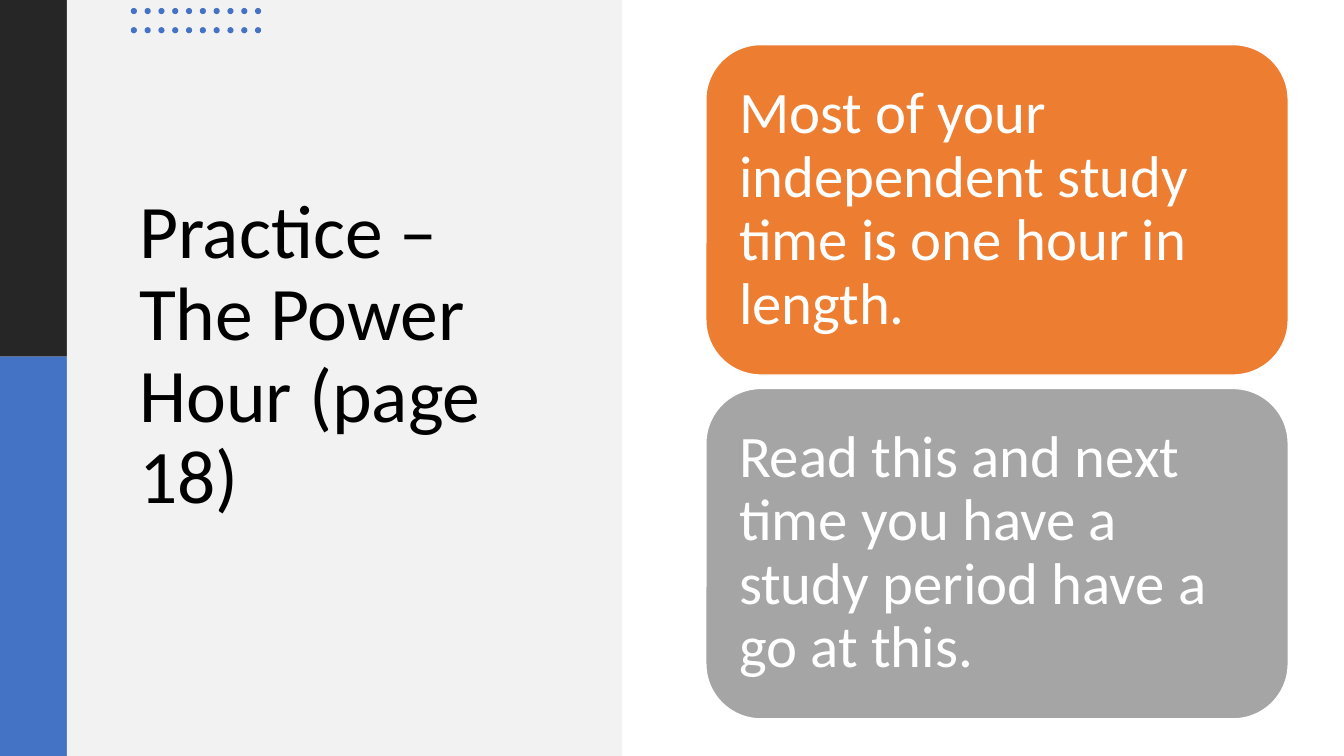
from dataclasses import dataclass

from pptx import Presentation
from pptx.dml.color import RGBColor
from pptx.enum.shapes import MSO_SHAPE
from pptx.enum.text import MSO_ANCHOR, MSO_AUTO_SIZE, PP_ALIGN
from pptx.shapes.autoshape import Shape
from pptx.util import Pt


@dataclass(frozen=True)
class Theme:
    font: str = "Calibri"
    title_size: float = 54
    card_size: float = 42
    line_spacing: float = 0.9
    black: str = "000000"
    white: str = "FFFFFF"
    dark: str = "262626"
    blue: str = "4472C4"
    panel: str = "F2F2F2"
    orange: str = "ED7D31"
    gray: str = "A5A5A5"


@dataclass(frozen=True)
class Box:
    left: float
    top: float
    width: float
    height: float

    def lengths(self) -> tuple[Pt, Pt, Pt, Pt]:
        return Pt(self.left), Pt(self.top), Pt(self.width), Pt(self.height)


@dataclass(frozen=True)
class Card:
    text: str
    color: str


THEME = Theme()
SLIDE_WIDTH, SLIDE_HEIGHT = 960, 540
BAR_WIDTH, BAR_SPLIT = 47.8, 254.8

BANDS = [
    (Box(0, 0, BAR_WIDTH, BAR_SPLIT), THEME.dark),
    (Box(0, BAR_SPLIT, BAR_WIDTH, SLIDE_HEIGHT - BAR_SPLIT), THEME.blue),
    (Box(BAR_WIDTH, 0, 396.6, SLIDE_HEIGHT), THEME.panel),
]
TITLE_BOX = Box(92.2, 94.3, 296.6, 321.1)

DOT_COLUMNS, DOT_ROWS = 10, 2
DOT_ORIGIN = Box(93.4, 5.7, 4.4, 4.4)
DOT_STEP_X, DOT_STEP_Y = 9.86, 13.7

CARDS = [
    Card("Most of your independent study time is one hour in length.", THEME.orange),
    Card("Read this and next time you have a study period have a go at this.", THEME.gray),
]
CARD_ORIGIN = Box(504.2, 31.9, 416, 236)
CARD_STEP = 245.6
CARD_INSET = 12.2


def add_filled(shapes, kind: MSO_SHAPE, box: Box, color: str) -> Shape:
    shape = shapes.add_shape(kind, *box.lengths())
    shape.shadow.inherit = False
    shape.fill.solid()
    shape.fill.fore_color.rgb = RGBColor.from_string(color)
    shape.line.fill.background()
    return shape


def write_text(shape: Shape, text: str, size: float, color: str) -> None:
    frame = shape.text_frame
    frame.text = text
    frame.word_wrap = True
    frame.auto_size = MSO_AUTO_SIZE.NONE
    frame.vertical_anchor = MSO_ANCHOR.MIDDLE
    paragraph = frame.paragraphs[0]
    paragraph.alignment = PP_ALIGN.LEFT
    paragraph.line_spacing = THEME.line_spacing
    paragraph.font.name = THEME.font
    paragraph.font.size = Pt(size)
    paragraph.font.color.rgb = RGBColor.from_string(color)


def add_card(shapes, card: Card, index: int) -> None:
    box = Box(CARD_ORIGIN.left, CARD_ORIGIN.top + index * CARD_STEP,
              CARD_ORIGIN.width, CARD_ORIGIN.height)
    shape = add_filled(shapes, MSO_SHAPE.ROUNDED_RECTANGLE, box, card.color)
    shape.line.color.rgb = RGBColor.from_string(THEME.white)
    shape.line.width = Pt(1)
    write_text(shape, card.text, THEME.card_size, THEME.white)
    frame = shape.text_frame
    frame.margin_left = frame.margin_right = Pt(CARD_INSET)
    frame.margin_top = frame.margin_bottom = Pt(CARD_INSET)


def add_dots(shapes) -> None:
    group = shapes.add_group_shape()
    for row in range(DOT_ROWS):
        for column in range(DOT_COLUMNS):
            box = Box(DOT_ORIGIN.left + column * DOT_STEP_X,
                      DOT_ORIGIN.top + row * DOT_STEP_Y,
                      DOT_ORIGIN.width, DOT_ORIGIN.height)
            add_filled(group.shapes, MSO_SHAPE.OVAL, box, THEME.blue)


def main() -> None:
    presentation = Presentation()
    presentation.slide_width = Pt(SLIDE_WIDTH)
    presentation.slide_height = Pt(SLIDE_HEIGHT)
    slide = presentation.slides.add_slide(presentation.slide_layouts.get_by_name("Title Only"))

    # Side bar and title panel
    bands = [add_filled(slide.shapes, MSO_SHAPE.RECTANGLE, box, color) for box, color in BANDS]

    # Title, raised above the panel
    title = slide.shapes.title
    title.left, title.top, title.width, title.height = TITLE_BOX.lengths()
    write_text(title, "Practice – The Power Hour (page 18)", THEME.title_size, THEME.black)
    bands[-1].element.addnext(title.element)

    # Dot grid
    add_dots(slide.shapes)

    # Message cards
    for index, card in enumerate(CARDS):
        add_card(slide.shapes, card, index)

    presentation.save("out.pptx")


if __name__ == "__main__":
    main()
